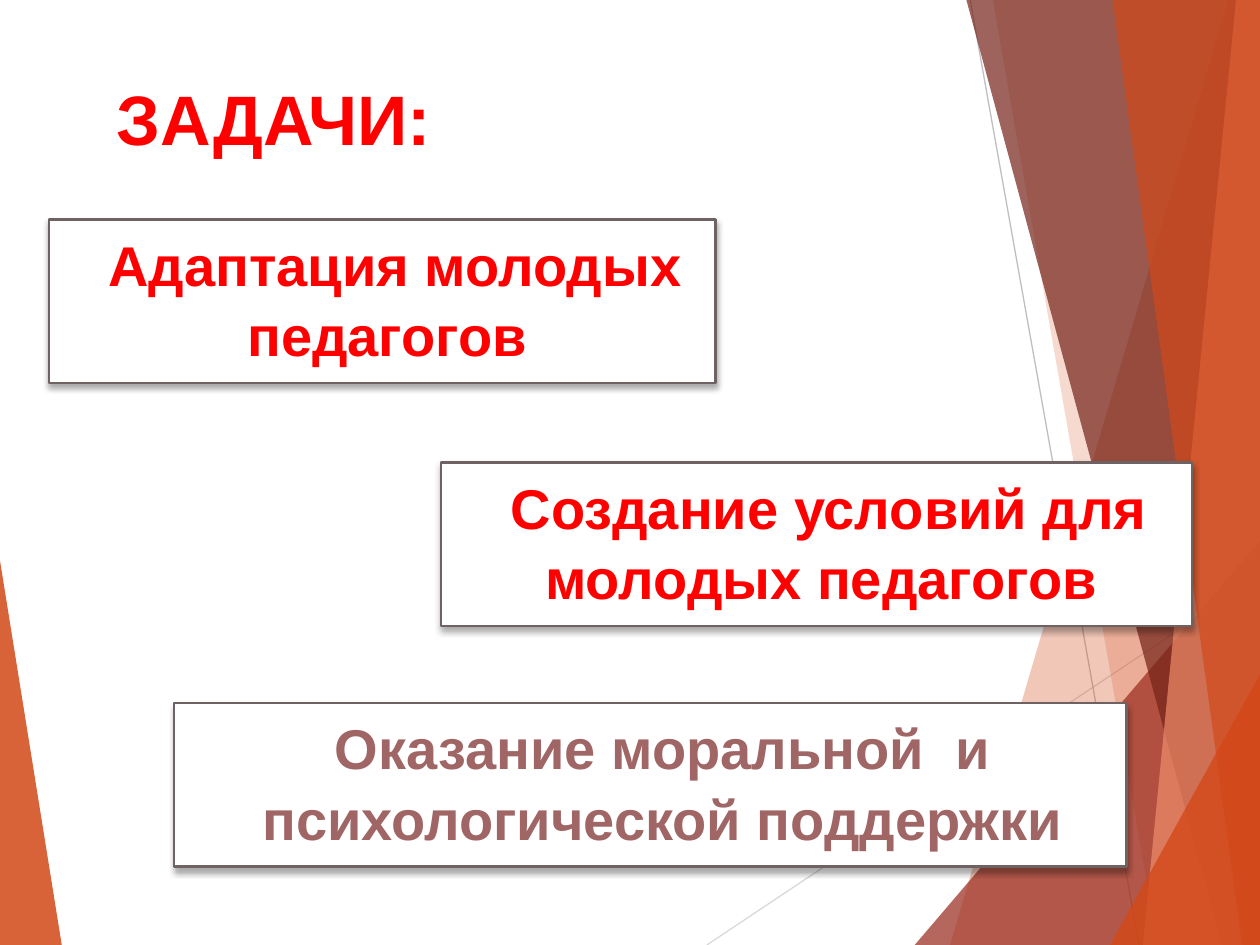
from lxml import etree
from pptx import Presentation
from pptx.dml.color import RGBColor
from pptx.enum.shapes import MSO_CONNECTOR, MSO_SHAPE
from pptx.enum.text import MSO_ANCHOR, PP_ALIGN
from pptx.oxml.ns import qn
from pptx.util import Inches, Pt

STRAIGHT = MSO_CONNECTOR.STRAIGHT
RECTANGLE = MSO_SHAPE.RECTANGLE
TOP = MSO_ANCHOR.TOP
CENTER = PP_ALIGN.CENTER

COLUMNS, ROWS = 100, 75
WIDTH, HEIGHT = Inches(10), Inches(7.5)
FONT = "Arial"
RED, ROSE, WHITE, FRAME = "FF0000", "A06565", "FFFFFF", "6E6263"
ORANGE, BRICK, MAROON, SALMON = "D34817", "9B2D1F", "742217", "EF8C6A"

RAYS = [((56.1, 75), (100, 45.7), "D9D9D9"), ((77, 0), (90.4, 75), "BFBFBF")]
FACETS = [
    ((97.5, 0), 75.4, ORANGE, 30),
    ((78.8, 0), 91.9, ORANGE, 20),
    ((100, 42.9), 72.6, BRICK, 72),
    ((76.7, 0), 97, MAROON, 70),
    ((98.1, 0), 90.7, SALMON, 70),
    ((88.3, 0), 98.6, ORANGE, 65),
    ((100, 53.5), 88.1, ORANGE, 80),
]
TASKS = [
    ((3.9, 17.4, 52.9, 13), "Адаптация молодых педагогов ", RED),
    ((35, 36.7, 59.6, 13), "Создание условий для молодых педагогов ", RED),
    ((13.8, 55.8, 75.6, 13), "Оказание моральной  и психологической поддержки", ROSE),
]


def rgb(code):
    """Turn a hex string into a colour."""
    return RGBColor.from_string(code)


def at(column, row):
    """Turn a grid position into slide lengths."""
    return round(column * WIDTH / COLUMNS), round(row * HEIGHT / ROWS)


def add_facet(slide, corners, color, opacity):
    """Draw a translucent polygon through grid corners."""
    start, *rest = [at(*corner) for corner in corners]
    builder = slide.shapes.build_freeform(*start)
    builder.add_line_segments(rest, close=True)
    facet = builder.convert_to_shape()
    facet.shadow.inherit = False
    facet.line.fill.background()
    facet.fill.solid()
    facet.fill.fore_color.rgb = rgb(color)
    tint = facet.fill._xPr.find(".//" + qn("a:srgbClr"))
    etree.SubElement(tint, qn("a:alpha"), val=str(opacity * 1000))


def add_ray(slide, start, end, color):
    """Draw a thin line between two grid positions."""
    ray = slide.shapes.add_connector(STRAIGHT, *at(*start), *at(*end))
    ray.line.color.rgb = rgb(color)
    ray.line.width = Pt(0.75)
    etree.SubElement(ray._element.spPr, qn("a:effectLst"))


def add_backdrop(slide):
    """Draw the left wedge, the rays and the facets along the right edge."""
    add_facet(slide, [(0, 44.5), (4.9, ROWS), (0, ROWS)], ORANGE, 85)
    for ray in RAYS:
        add_ray(slide, *ray)
    for peak, foot, color, opacity in FACETS:
        corners = [peak, (foot, ROWS), (COLUMNS, ROWS)]
        if peak[0] < COLUMNS:
            corners.append((COLUMNS, peak[1]))
        add_facet(slide, corners, color, opacity)


def write(shape, wording, size, color, inset):
    """Fill a shape with one bold centred paragraph."""
    frame = shape.text_frame
    frame.word_wrap = True
    frame.vertical_anchor = TOP
    frame.margin_top = Inches(inset)
    paragraph = frame.paragraphs[0]
    paragraph.text = wording
    paragraph.alignment = CENTER
    paragraph.line_spacing = 1.05
    properties = paragraph._p.get_or_add_pPr()
    properties.set("marL", str(Inches(0.2)))
    properties.set("indent", "0")
    font = paragraph.font
    font.name, font.size, font.bold = FONT, Pt(size), True
    font.color.rgb = rgb(color)


def add_heading(slide, box, wording):
    """Place the slide heading in its grid box."""
    left, top, width, height = box
    heading = slide.shapes.add_textbox(*at(left, top), *at(width, height))
    write(heading, wording, 40, RED, 0.11)


def add_task(slide, box, wording, color):
    """Place a framed task card with a soft shadow in its grid box."""
    left, top, width, height = box
    card = slide.shapes.add_shape(RECTANGLE, *at(left, top), *at(width, height))
    card.fill.solid()
    card.fill.fore_color.rgb = rgb(WHITE)
    card.line.color.rgb = rgb(FRAME)
    card.line.width = Pt(1.5)
    card.shadow.inherit = False
    effects = card._element.spPr.find(qn("a:effectLst"))
    shadow = etree.SubElement(
        effects, qn("a:outerShdw"), blurRad=str(Pt(3.5)), dist=str(Pt(2.2)),
        dir="5400000", rotWithShape="0")
    shade = etree.SubElement(shadow, qn("a:srgbClr"), val="000000")
    etree.SubElement(shade, qn("a:alpha"), val="32000")
    write(card, wording, 32, color, 0.06)


def main():
    """Build and save the slide."""
    deck = Presentation()
    deck.slide_width, deck.slide_height = WIDTH, HEIGHT
    slide = deck.slides.add_slide(deck.slide_layouts[6])
    add_backdrop(slide)
    add_heading(slide, (4.6, 4.6, 32.3, 7.2), "ЗАДАЧИ:")
    for task in TASKS:
        add_task(slide, *task)
    deck.save("out.pptx")


if __name__ == "__main__":
    main()
